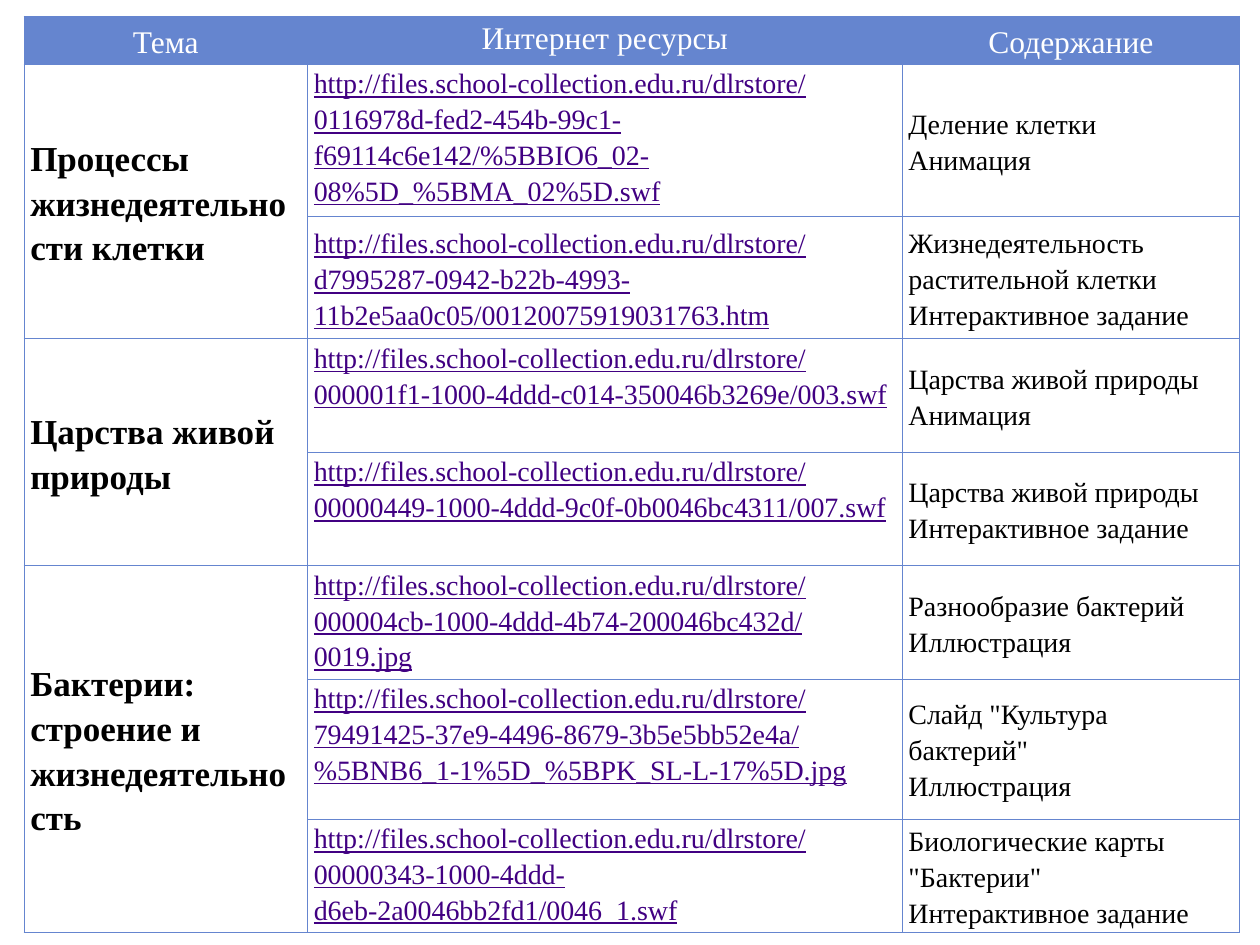
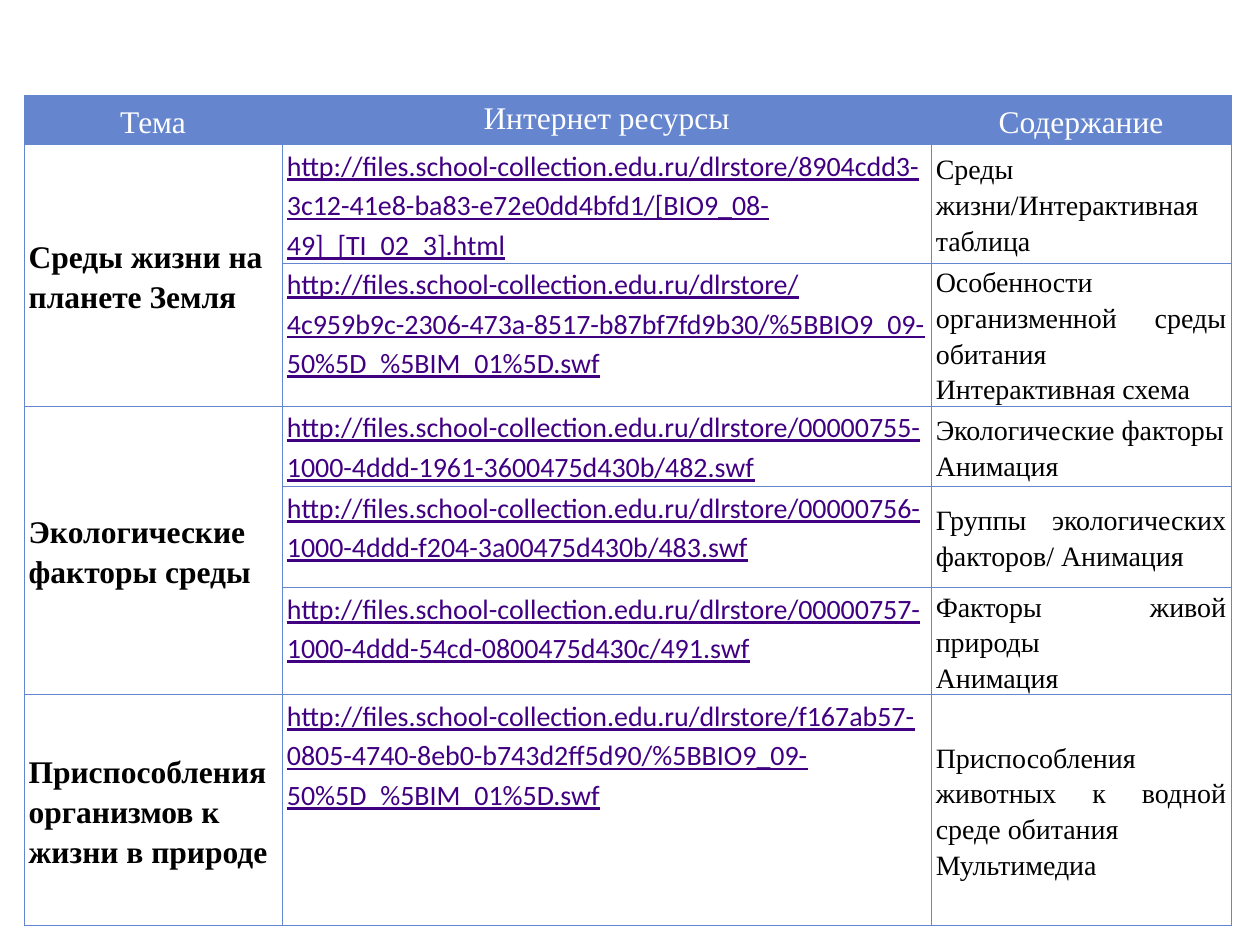
from dataclasses import dataclass

from lxml import etree
from pptx import Presentation
from pptx.dml.color import RGBColor
from pptx.enum.text import MSO_ANCHOR, PP_ALIGN
from pptx.oxml.ns import qn
from pptx.util import Inches, Pt

TOP, MIDDLE = MSO_ANCHOR.TOP, MSO_ANCHOR.MIDDLE
LEFT, CENTER, JUSTIFY = PP_ALIGN.LEFT, PP_ALIGN.CENTER, PP_ALIGN.JUSTIFY


@dataclass(frozen=True)
class Theme:
    blue: str = "6585CF"
    white: str = "FFFFFF"
    black: str = "000000"
    link: str = "410082"
    serif: str = "Times New Roman"
    sans: str = "Calibri"
    header_size: int = 18
    body_size: int = 16
    line_spacing: float = 1.15
    border: float = 0.5
    header_inset: float = 3.6


THEME = Theme()
TABLE_LEFT = 0.19
HEADERS = ["Тема", "Интернет ресурсы", "Содержание"]
STORE = "http://files.school-collection.edu.ru/dlrstore/"

# Each topic holds its resources: (address after STORE, description lines)
SLIDES = [
    {
        "top": 0.13, "inset": 3.6,
        "cols": [2.25, 4.72, 2.68],
        "rows": [0.38, 1.21, 0.97, 0.9, 0.9, 0.9, 1.11, 0.9],
        "topic_size": 20, "link_font": THEME.serif,
        "content_align": LEFT, "middle_links": {2},
        "topics": [
            ("Процессы жизнедеятельности клетки", [
                ("0116978d-fed2-454b-99c1-f69114c6e142/%5BBIO6_02-08%5D_%5BMA_02%5D.swf",
                 ["Деление клетки", "Анимация"]),
                ("d7995287-0942-b22b-4993-11b2e5aa0c05/00120075919031763.htm",
                 ["Жизнедеятельность растительной клетки", "Интерактивное задание"]),
            ]),
            ("Царства живой природы", [
                ("000001f1-1000-4ddd-c014-350046b3269e/003.swf",
                 ["Царства живой природы", "Анимация"]),
                ("00000449-1000-4ddd-9c0f-0b0046bc4311/007.swf",
                 ["Царства живой природы", "Интерактивное задание"]),
            ]),
            ("Бактерии: строение и жизнедеятельность", [
                ("000004cb-1000-4ddd-4b74-200046bc432d/0019.jpg",
                 ["Разнообразие бактерий", "Иллюстрация"]),
                ("79491425-37e9-4496-8679-3b5e5bb52e4a/%5BNB6_1-1%5D_%5BPK_SL-L-17%5D.jpg",
                 ['Слайд "Культура бактерий"', "Иллюстрация"]),
                ("00000343-1000-4ddd-d6eb-2a0046bb2fd1/0046_1.swf",
                 ['Биологические карты "Бактерии"', "Интерактивное задание"]),
            ]),
        ],
    },
    {
        "top": 0.76, "inset": 2.7,
        "cols": [2.05, 5.15, 2.38],
        "rows": [0.39, 0.64, 1, 0.64, 0.8, 0.64, 1.83],
        "topic_size": 18, "link_font": THEME.sans,
        "content_align": JUSTIFY, "middle_links": set(),
        "topics": [
            ("Среды жизни на планете Земля", [
                ("8904cdd3-3c12-41e8-ba83-e72e0dd4bfd1/[BIO9_08-49]_[TI_02_3].html",
                 ["Среды жизни/Интерактивная таблица"]),
                ("4c959b9c-2306-473a-8517-b87bf7fd9b30/%5BBIO9_09-50%5D_%5BIM_01%5D.swf",
                 ["Особенности организменной среды обитания", "Интерактивная схема"]),
            ]),
            ("Экологические факторы среды", [
                ("00000755-1000-4ddd-1961-3600475d430b/482.swf",
                 ["Экологические факторы", "Анимация"]),
                ("00000756-1000-4ddd-f204-3a00475d430b/483.swf",
                 ["Группы экологических факторов/ Анимация"]),
                ("00000757-1000-4ddd-54cd-0800475d430c/491.swf",
                 ["Факторы живой природы", "Анимация"]),
            ]),
            ("Приспособления организмов к жизни в природе", [
                ("f167ab57-0805-4740-8eb0-b743d2ff5d90/%5BBIO9_09-50%5D_%5BIM_01%5D.swf",
                 ["Приспособления животных к водной среде обитания", "Мультимедиа"]),
            ]),
        ],
    },
]


def frame_cell(cell, fill=None):
    """Draw the four borders of a cell, then fill it or leave it clear."""
    tcPr = cell._tc.get_or_add_tcPr()
    for side in ("lnL", "lnR", "lnT", "lnB"):
        ln = etree.SubElement(tcPr, qn(f"a:{side}"), w=str(Pt(THEME.border)))
        solid = etree.SubElement(ln, qn("a:solidFill"))
        etree.SubElement(solid, qn("a:srgbClr"), val=THEME.blue)
    if fill:
        cell.fill.solid()
        cell.fill.fore_color.rgb = RGBColor.from_string(fill)
    else:
        cell.fill.background()


def write_cell(cell, lines, inset, align=LEFT, anchor=MIDDLE, color=THEME.black, **font):
    cell.vertical_anchor = anchor
    cell.margin_left = cell.margin_right = Pt(inset)
    cell.margin_top = cell.margin_bottom = 0
    tf = cell.text_frame
    for i, line in enumerate(lines):
        p = tf.paragraphs[0] if i == 0 else tf.add_paragraph()
        p.alignment, p.line_spacing = align, THEME.line_spacing
        r = p.add_run()
        r.text = line
        values = {"name": THEME.serif, "size": Pt(THEME.body_size), "bold": False, **font}
        for name, value in values.items():
            setattr(r.font, name, value)
        r.font.color.rgb = RGBColor.from_string(color)


prs = Presentation()
prs.slide_width, prs.slide_height = Inches(10), Inches(7.5)

for page in SLIDES:
    s = prs.slides.add_slide(prs.slide_layouts[6])
    cols, rows, inset = page["cols"], page["rows"], page["inset"]
    table = s.shapes.add_table(len(rows), len(cols), Inches(TABLE_LEFT), Inches(page["top"]),
                               Inches(sum(cols)), Inches(sum(rows))).table
    table.first_row = table.horz_banding = False
    for col, width in zip(table.columns, cols):
        col.width = Inches(width)
    for i, (row, height) in enumerate(zip(table.rows, rows)):
        row.height = Inches(height)
        for cell in row.cells:
            frame_cell(cell, THEME.blue if i == 0 else None)

    for c, header in enumerate(HEADERS):
        write_cell(table.cell(0, c), [header], THEME.header_inset, CENTER,
                   TOP if c == 1 else MIDDLE, THEME.white, size=Pt(THEME.header_size))

    row = 1
    for topic, resources in page["topics"]:
        topic_cell = table.cell(row, 0)
        if len(resources) > 1:
            topic_cell.merge(table.cell(row + len(resources) - 1, 0))
        write_cell(topic_cell, [topic], inset, size=Pt(page["topic_size"]), bold=True)
        for address, description in resources:
            centred = row in page["middle_links"]
            write_cell(table.cell(row, 1), [STORE + address], inset,
                       LEFT if centred else JUSTIFY, MIDDLE if centred else TOP,
                       THEME.link, name=page["link_font"], underline=True)
            write_cell(table.cell(row, 2), description, inset, page["content_align"])
            row += 1

prs.save("out.pptx")
